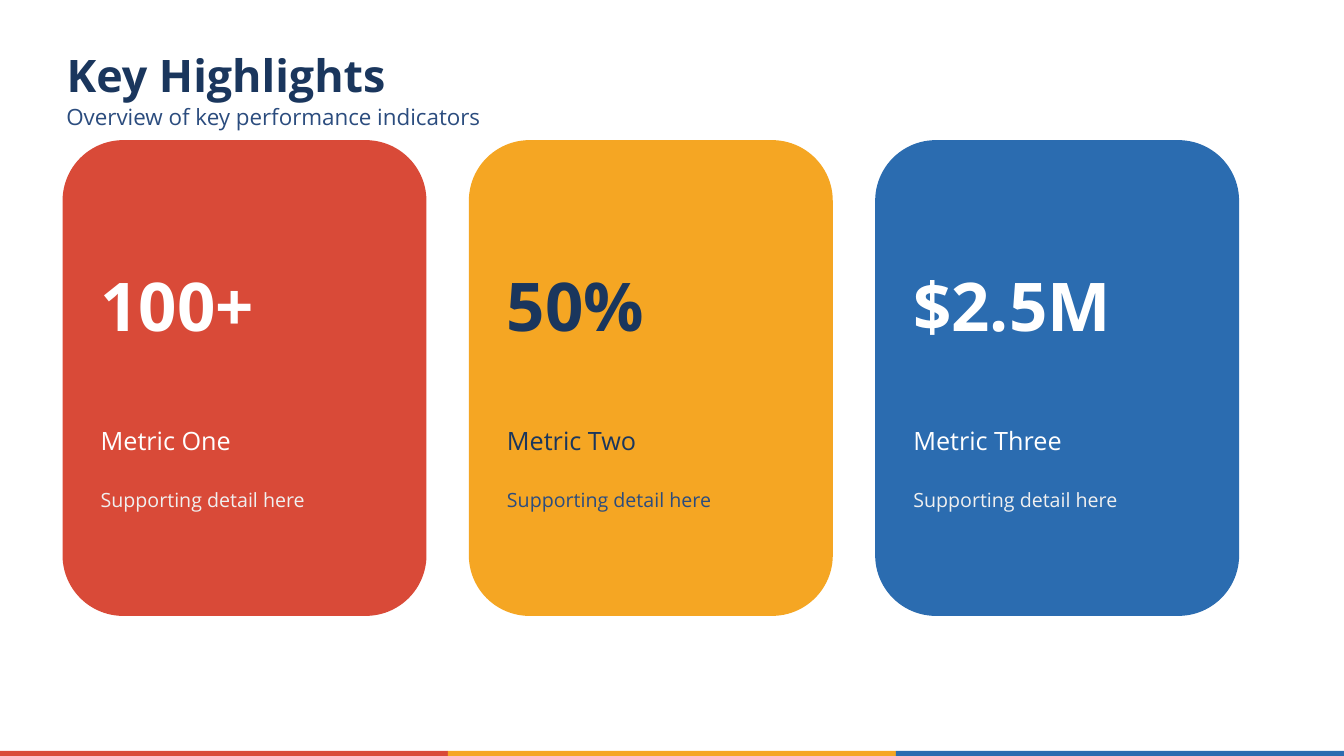
from dataclasses import dataclass

from pptx import Presentation
from pptx.dml.color import RGBColor
from pptx.enum.shapes import MSO_SHAPE
from pptx.enum.text import MSO_ANCHOR, MSO_AUTO_SIZE, PP_ALIGN
from pptx.shapes.base import BaseShape
from pptx.slide import Slide
from pptx.util import Inches, Pt

RECTANGLE = MSO_SHAPE.RECTANGLE
ROUNDED_RECTANGLE = MSO_SHAPE.ROUNDED_RECTANGLE
MIDDLE = MSO_ANCHOR.MIDDLE
NO_AUTOFIT = MSO_AUTO_SIZE.NONE
LEFT = PP_ALIGN.LEFT
TITLE_ONLY = 5

SLIDE_WIDTH, SLIDE_HEIGHT = 13.33, 7.5
STRIPE_HEIGHT = 0.05
CARD_LEFT, CARD_TOP = 0.62, 1.39
CARD_WIDTH, CARD_HEIGHT = 3.61, 4.72
CARD_PITCH = 4.03
CARD_PADDING = 0.28
CARD_TEXT_WIDTH = 3.06


@dataclass(frozen=True)
class Theme:
    font: str = "Open Sans"
    red: str = "D94A38"
    amber: str = "F5A623"
    blue: str = "2B6CB0"
    navy: str = "1A365D"
    slate: str = "2B4C7E"
    white: str = "FFFFFF"
    pale: str = "F0F0F0"
    title_size: int = 32
    subtitle_size: int = 16
    value_size: int = 48
    label_size: int = 18
    detail_size: int = 14


@dataclass(frozen=True)
class Box:
    left: float
    top: float
    width: float
    height: float


@dataclass(frozen=True)
class Metric:
    value: str
    label: str
    detail: str
    fill: str
    strong_color: str
    soft_color: str


THEME = Theme()
METRICS = [
    Metric("100+", "Metric One", "Supporting detail here", THEME.red, THEME.white, THEME.pale),
    Metric("50%", "Metric Two", "Supporting detail here", THEME.amber, THEME.navy, THEME.slate),
    Metric("$2.5M", "Metric Three", "Supporting detail here", THEME.blue, THEME.white, THEME.pale),
]


def place(shape: BaseShape, box: Box) -> None:
    shape.left, shape.top = Inches(box.left), Inches(box.top)
    shape.width, shape.height = Inches(box.width), Inches(box.height)


def write(shape: BaseShape, text: str, size: int, color: str, bold: bool = False) -> None:
    """Fill a shape with one left-aligned, vertically centred line."""
    frame = shape.text_frame
    frame.text = text
    frame.word_wrap = True
    frame.auto_size = NO_AUTOFIT
    frame.vertical_anchor = MIDDLE
    paragraph = frame.paragraphs[0]
    paragraph.alignment = LEFT
    paragraph.line_spacing = 1.0
    paragraph.space_before = Pt(0)
    paragraph.font.name = THEME.font
    paragraph.font.size = Pt(size)
    paragraph.font.bold = bold
    paragraph.font.color.rgb = RGBColor.from_string(color)


def add_label(slide: Slide, box: Box, text: str, size: int, color: str,
              bold: bool = False) -> None:
    label = slide.shapes.add_textbox(0, 0, 0, 0)
    place(label, box)
    write(label, text, size, color, bold)


def add_panel(slide: Slide, kind: MSO_SHAPE, box: Box, fill: str) -> None:
    panel = slide.shapes.add_shape(kind, 0, 0, 0, 0)
    place(panel, box)
    panel.shadow.inherit = False
    panel.fill.solid()
    panel.fill.fore_color.rgb = RGBColor.from_string(fill)
    panel.line.fill.background()


def add_card(slide: Slide, left: float, metric: Metric) -> None:
    add_panel(slide, ROUNDED_RECTANGLE, Box(left, CARD_TOP, CARD_WIDTH, CARD_HEIGHT), metric.fill)
    text_left = left + CARD_PADDING
    add_label(slide, Box(text_left, 2.57, CARD_TEXT_WIDTH, 0.91),
              metric.value, THEME.value_size, metric.strong_color, bold=True)
    add_label(slide, Box(text_left, 4.17, CARD_TEXT_WIDTH, 0.4),
              metric.label, THEME.label_size, metric.strong_color)
    add_label(slide, Box(text_left, 4.79, CARD_TEXT_WIDTH, 0.34),
              metric.detail, THEME.detail_size, metric.soft_color)


def add_footer_stripes(slide: Slide) -> None:
    width = SLIDE_WIDTH / len(METRICS)
    for index, metric in enumerate(METRICS):
        stripe = Box(index * width, SLIDE_HEIGHT - STRIPE_HEIGHT, width, STRIPE_HEIGHT)
        add_panel(slide, RECTANGLE, stripe, metric.fill)


def main() -> None:
    presentation = Presentation()
    presentation.slide_width = Inches(SLIDE_WIDTH)
    presentation.slide_height = Inches(SLIDE_HEIGHT)
    slide = presentation.slides.add_slide(presentation.slide_layouts[TITLE_ONLY])

    add_footer_stripes(slide)
    title = slide.shapes.title
    place(title, Box(0.56, 0.42, 12.22, 0.64))
    write(title, "Key Highlights", THEME.title_size, THEME.navy, bold=True)
    add_label(slide, Box(0.56, 0.97, 6.94, 0.37), "Overview of key performance indicators",
              THEME.subtitle_size, THEME.slate)
    for index, metric in enumerate(METRICS):
        add_card(slide, CARD_LEFT + index * CARD_PITCH, metric)

    presentation.save("out.pptx")


if __name__ == "__main__":
    main()
